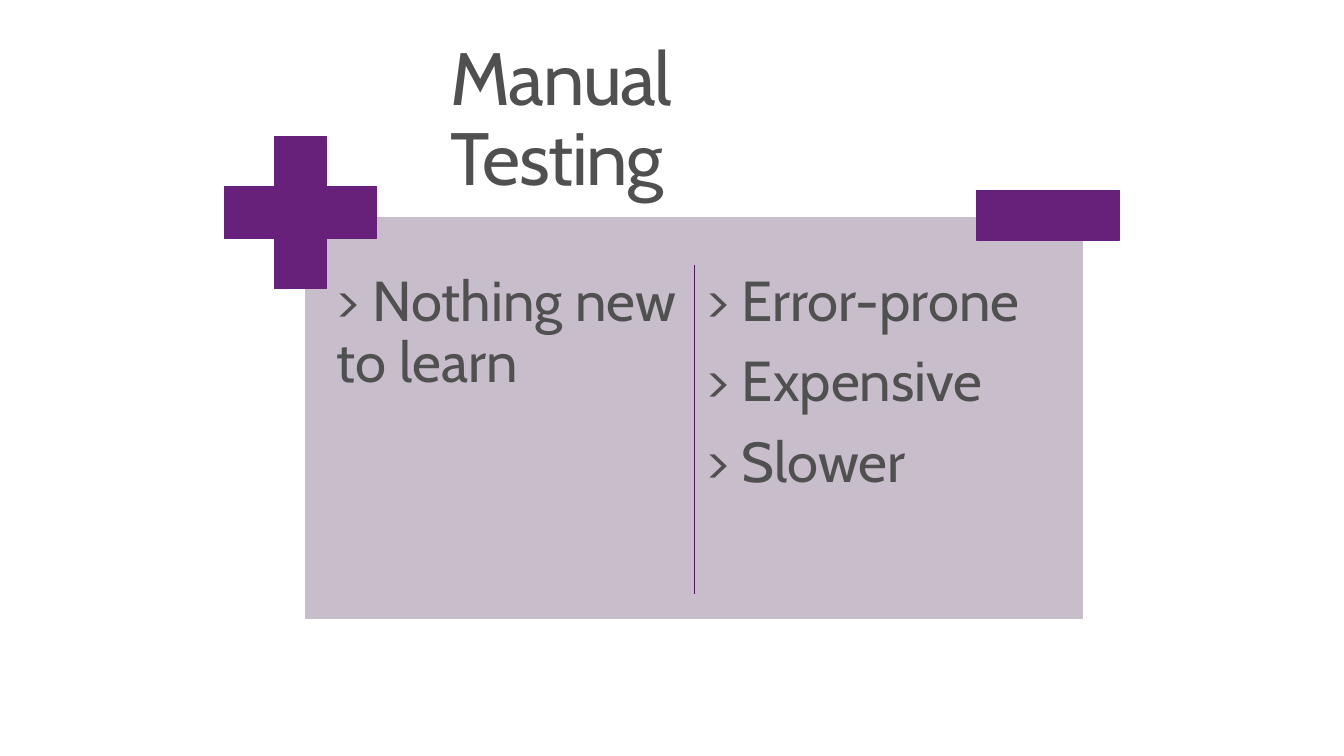
from dataclasses import dataclass

from lxml import etree
from pptx import Presentation
from pptx import util as u
from pptx.dml.color import RGBColor
from pptx.enum import shapes, text
from pptx.oxml.ns import qn


@dataclass(frozen=True)
class Theme:
    font: str = "Cabin"
    ink: str = "505050"
    panel: str = "C7BDCB"
    accent: str = "68217A"
    divider: str = "531A62"
    paper: str = "FFFFFF"
    title_size: int = 54
    body_size: int = 41
    line_width: float = 0.85
    line_spacing: float = 0.9
    space_after: float = 0.35  # share of the type size


class SlideBuilder:
    def __init__(self, slide, theme):
        self.slide = slide
        self.theme = theme

    def format_text(self, frame, size, margins, space_after=0):
        frame.word_wrap = True
        frame.auto_size = text.MSO_AUTO_SIZE.NONE
        frame.vertical_anchor = text.MSO_ANCHOR.TOP
        frame.margin_left = frame.margin_right = u.Inches(margins[0])
        frame.margin_top = frame.margin_bottom = u.Inches(margins[1])
        for paragraph in frame.paragraphs:
            paragraph.alignment = text.PP_ALIGN.LEFT
            paragraph.line_spacing = self.theme.line_spacing
            paragraph.space_before = u.Pt(0)
            paragraph.space_after = u.Pt(size * space_after)
            paragraph.font.name = self.theme.font
            paragraph.font.size = u.Pt(size)
            paragraph.font.color.rgb = RGBColor.from_string(self.theme.ink)

    def title(self, wording, left, top, width, height):
        shape = self.slide.shapes.title
        shape.left, shape.top = u.Inches(left), u.Inches(top)
        shape.width, shape.height = u.Inches(width), u.Inches(height)
        shape.text_frame.text = wording
        self.format_text(shape.text_frame, self.theme.title_size, (0.16, 0.1))
        # Tighten the letters by one point
        run = shape.text_frame.paragraphs[0].runs[0]
        run.font._element.set("spc", "-100")

    def block(self, kind, left, top, width, height, fill, line):
        shape = self.slide.shapes.add_shape(
            kind, u.Inches(left), u.Inches(top), u.Inches(width), u.Inches(height))
        shape.shadow.inherit = False
        shape.fill.solid()
        shape.fill.fore_color.rgb = RGBColor.from_string(fill)
        shape.line.color.rgb = RGBColor.from_string(line)
        shape.line.width = u.Pt(self.theme.line_width)
        return shape

    def points(self, items, left, top, width, height):
        box = self.slide.shapes.add_textbox(
            u.Inches(left), u.Inches(top), u.Inches(width), u.Inches(height))
        box.text_frame.text = "\n".join(f"> {item}" for item in items)
        self.format_text(box.text_frame, self.theme.body_size, (0.09, 0.09),
                         self.theme.space_after)

    def vertical_line(self, x, top, bottom):
        line = self.slide.shapes.add_connector(
            shapes.MSO_CONNECTOR.STRAIGHT,
            u.Inches(x), u.Inches(top), u.Inches(x), u.Inches(bottom))
        line.line.color.rgb = RGBColor.from_string(self.theme.divider)
        line.line.width = u.Pt(self.theme.line_width)
        etree.SubElement(line._element.spPr, qn("a:effectLst"))


def main():
    presentation = Presentation()
    presentation.slide_width = u.Inches(13.6)
    presentation.slide_height = u.Inches(7.65)
    theme = Theme()
    slide = presentation.slides.add_slide(presentation.slide_layouts[5])
    builder = SlideBuilder(slide, theme)

    # Title
    builder.title("Manual Testing", 4.4, 0.32, 4.8, 1)

    # Panel with advantages on the left and drawbacks on the right
    rectangle = shapes.MSO_SHAPE.RECTANGLE
    builder.block(rectangle, 3.08, 2.19, 7.89, 4.08, theme.panel, theme.paper)
    columns = {
        3.32: ["Nothing new to learn"],
        7.06: ["Error-prone", "Expensive", "Slower"],
    }
    for left, items in columns.items():
        builder.points(items, left, 2.67, 3.66, 3.49)

    # Plus and minus signs
    plus = builder.block(shapes.MSO_SHAPE.CROSS, 2.27, 1.38, 1.54, 1.54,
                         theme.accent, theme.accent)
    plus.adjustments[0] = 0.33
    builder.block(rectangle, 9.88, 1.93, 1.45, 0.5, theme.accent, theme.accent)

    # Divider between the columns
    builder.vertical_line(7.03, 2.68, 6.01)

    presentation.save("out.pptx")


if __name__ == "__main__":
    main()
